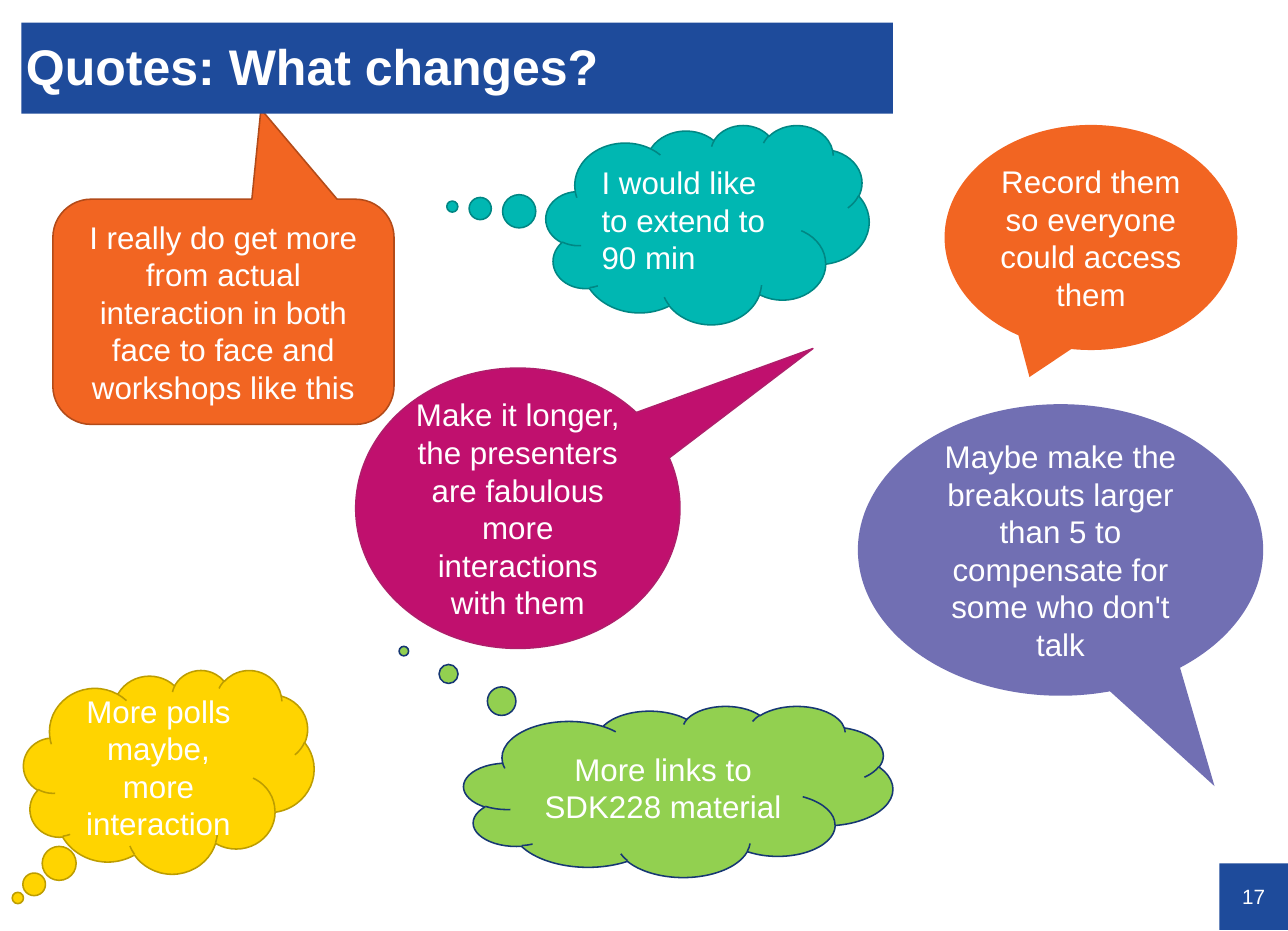
import pptx
import pptx.util
import pptx.dml.color
import pptx.enum.shapes
import pptx.enum.text

Inches = pptx.util.Inches
Color = pptx.dml.color.RGBColor
Shape = pptx.enum.shapes.MSO_SHAPE
Align = pptx.enum.text.PP_ALIGN

WHITE = Color(0xFF, 0xFF, 0xFF)
BLUE = Color(0x1E, 0x4B, 0x9B)
NAVY = Color(0x16, 0x37, 0x73)
ORANGE = Color(0xF2, 0x65, 0x22)
RUST = Color(0xB3, 0x4B, 0x19)
TEAL = Color(0x00, 0xB7, 0xB2)
DARK_TEAL = Color(0x00, 0x87, 0x84)
YELLOW = Color(0xFF, 0xD4, 0x00)
OCHRE = Color(0xBD, 0x9D, 0x00)
MAGENTA = Color(0xC0, 0x10, 0x6E)
PLUM = Color(0xAF, 0x1E, 0x6B)
GREEN = Color(0x92, 0xD0, 0x50)
PURPLE = Color(0x71, 0x6F, 0xB3)

ROUNDED = Shape.ROUNDED_RECTANGULAR_CALLOUT
CLOUD = Shape.CLOUD_CALLOUT
OVAL = Shape.OVAL_CALLOUT
BODY_INSETS = (0.1, 0.05, 0.1, 0.05)

QUOTES = [
    (ROUNDED, (0.47, 1.77, 3.03, 2), (0.11, -0.9, 0.17), ORANGE, RUST, Align.CENTER,
     "I really do get more from actual interaction in both face to face and workshops like this"),
    (CLOUD, (4.85, 1.11, 2.87, 1.77), (-0.79, -0.09), TEAL, DARK_TEAL, Align.LEFT,
     "I would like to extend to 90 min"),
    (CLOUD, (0.21, 5.95, 2.58, 1.81), (-0.52, 0.62), YELLOW, OCHRE, Align.CENTER,
     "More polls maybe, more interaction"),
    (OVAL, (3.16, 3.27, 2.88, 2.49), (0.91, -0.57), MAGENTA, PLUM, Align.CENTER,
     "Make it longer, the presenters are fabulous more interactions with them"),
    (CLOUD, (4.12, 6.27, 3.81, 1.52), (-0.64, -0.82), GREEN, NAVY, Align.CENTER,
     "More links to SDK228 material"),
    (OVAL, (8.39, 1.11, 2.6, 2), (-0.21, 0.62), ORANGE, None, Align.CENTER,
     "Record them so everyone could access them"),
    (OVAL, (7.62, 3.59, 3.6, 2.59), (0.38, 0.81), PURPLE, None, Align.CENTER,
     "Maybe make the breakouts larger than 5 to compensate for some who don't talk"),
]


def add_panel(page, kind, box, fill, outline=None):
    panel = page.shapes.add_shape(kind, *map(Inches, box))
    panel.shadow.inherit = False
    panel.fill.solid()
    panel.fill.fore_color.rgb = fill
    if outline is None:
        panel.line.fill.background()
    else:
        panel.line.color.rgb = outline
        panel.line.width = pptx.util.Pt(1)
    return panel


def write_text(panel, text, size, align, insets=BODY_INSETS, bold=False):
    frame = panel.text_frame
    frame.word_wrap = True
    frame.vertical_anchor = pptx.enum.text.MSO_ANCHOR.MIDDLE
    for side, inset in zip(("left", "top", "right", "bottom"), insets):
        setattr(frame, f"margin_{side}", Inches(inset))
    para = frame.paragraphs[0]
    para.alignment = align
    span = para.add_run()
    span.text = text
    formats = {"name": "Arial", "size": pptx.util.Pt(size), "bold": bold}
    for name, value in formats.items():
        setattr(span.font, name, value)
    span.font.color.rgb = WHITE
    return para


def add_page_number(page, box):
    panel = add_panel(page, Shape.RECTANGLE, box, BLUE)
    write_text(panel, "17", 13.2, Align.CENTER, insets=(0, 0, 0, 0))


def add_quote(page, kind, box, pointer, fill, outline, align, text):
    panel = add_panel(page, kind, box, fill, outline)
    for index, value in enumerate(pointer):
        panel.adjustments[index] = value
    write_text(panel, text, 20, align)


def add_title(page, box):
    panel = add_panel(page, Shape.RECTANGLE, box, BLUE)
    para = write_text(panel, "Quotes: What changes?", 32, Align.LEFT,
                      insets=(0.04, 0.02, 0, 0), bold=True)
    para.line_spacing = 0.9


def main():
    deck = pptx.Presentation()
    deck.slide_width = Inches(11.44)
    deck.slide_height = Inches(8.27)
    page = deck.slides.add_slide(deck.slide_layouts[6])
    add_page_number(page, (10.83, 7.67, 0.61, 0.59))
    for quote in QUOTES:
        add_quote(page, *quote)
    add_title(page, (0.19, 0.2, 7.74, 0.81))
    deck.save("out.pptx")


if __name__ == "__main__":
    main()
